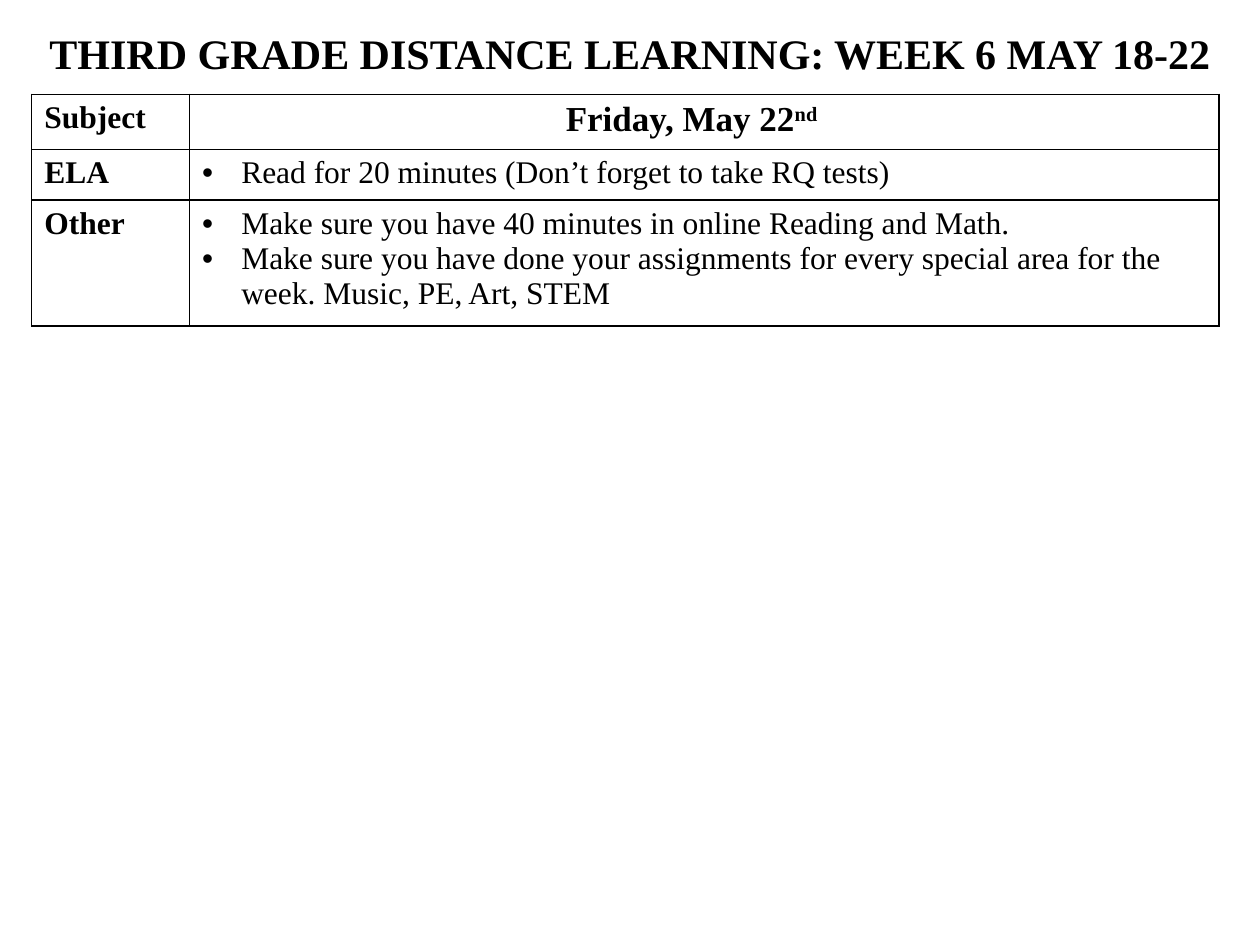
from lxml.etree import SubElement
from pptx import Presentation
from pptx.dml.color import RGBColor
from pptx.enum.text import MSO_AUTO_SIZE as AutoSize, PP_ALIGN as Align
from pptx.oxml import parse_xml
from pptx.oxml.ns import nsdecls, qn
from pptx.util import Cm, Pt

BLACK = RGBColor(0x00, 0x00, 0x00)
WHITE = RGBColor(0xFF, 0xFF, 0xFF)

TITLE = "THIRD GRADE DISTANCE LEARNING: WEEK 6 MAY 18-22"
TASKS = {
    "ELA": ["Read for 20 minutes (Don’t forget to take RQ tests)"],
    "Other": [
        "Make sure you have 40 minutes in online Reading and Math.",
        "Make sure you have done your assignments for every special area "
        "for the week. Music, PE, Art, STEM",
    ],
}
COLUMN_WIDTHS = [Cm(3.18), Cm(20.75)]
ROW_HEIGHTS = [Cm(1.11), Cm(1.02), Cm(2.54)]


def write(paragraph, text, size=18, bold=False, align=None, raised=False):
    """Add a run to the paragraph; raised makes it superscript."""
    if align is not None:
        paragraph.alignment = align
    run = paragraph.add_run()
    run.text = text
    font = run.font
    font.name, font.size, font.bold = "Times New Roman", Pt(size), bold
    font.color.rgb = BLACK
    if raised:
        font._element.set("baseline", "30000")


def add_bullet(paragraph, indent=Cm(0.79)):
    properties = paragraph._p.get_or_add_pPr()
    properties.set("marL", str(indent))
    properties.set("indent", str(-indent))
    SubElement(properties, qn("a:buFont"), typeface="Arial")
    SubElement(properties, qn("a:buChar"), char="•")


class Schedule:
    def __init__(self, slide, line_width=Pt(1)):
        self.slide = slide
        self.line_width = line_width

    def title(self, text):
        box = self.slide.shapes.add_textbox(Cm(0), Cm(0.43), Cm(25.4), Cm(1.27))
        frame = box.text_frame
        frame.word_wrap = True
        frame.auto_size = AutoSize.SHAPE_TO_FIT_TEXT
        write(frame.paragraphs[0], text, size=24, bold=True, align=Align.CENTER)

    def style_cell(self, cell):
        cell.fill.solid()
        cell.fill.fore_color.rgb = WHITE
        properties = cell._tc.get_or_add_tcPr()
        for position, side in enumerate("LRTB"):
            properties.insert(position, parse_xml(
                f'<a:ln{side} {nsdecls("a")} w="{self.line_width}"><a:solidFill>'
                f'<a:srgbClr val="{BLACK}"/></a:solidFill></a:ln{side}>'))

    def table(self, tasks):
        table = self.slide.shapes.add_table(
            len(ROW_HEIGHTS), len(COLUMN_WIDTHS), Cm(0.64), Cm(1.9),
            sum(COLUMN_WIDTHS), sum(ROW_HEIGHTS)).table
        for column, width in zip(table.columns, COLUMN_WIDTHS):
            column.width = width
        for row, height in zip(table.rows, ROW_HEIGHTS):
            row.height = height
        for cell in table.iter_cells():
            self.style_cell(cell)

        for row, subject in enumerate(["Subject", *tasks]):
            write(table.cell(row, 0).text_frame.paragraphs[0], subject, bold=True)

        day = table.cell(0, 1)
        day.margin_right = Cm(0.76)
        heading = day.text_frame.paragraphs[0]
        write(heading, "Friday, May 22", size=20, bold=True, align=Align.CENTER)
        write(heading, "nd", size=20, bold=True, raised=True)

        for row, items in enumerate(tasks.values(), start=1):
            frame = table.cell(row, 1).text_frame
            for number, item in enumerate(items):
                paragraph = frame.add_paragraph() if number else frame.paragraphs[0]
                add_bullet(paragraph)
                write(paragraph, item)


def main():
    deck = Presentation()
    deck.slide_width, deck.slide_height = Cm(25.4), Cm(19.05)
    schedule = Schedule(deck.slides.add_slide(deck.slide_layouts[6]))
    schedule.table(TASKS)
    schedule.title(TITLE)
    deck.save("out.pptx")


if __name__ == "__main__":
    main()
